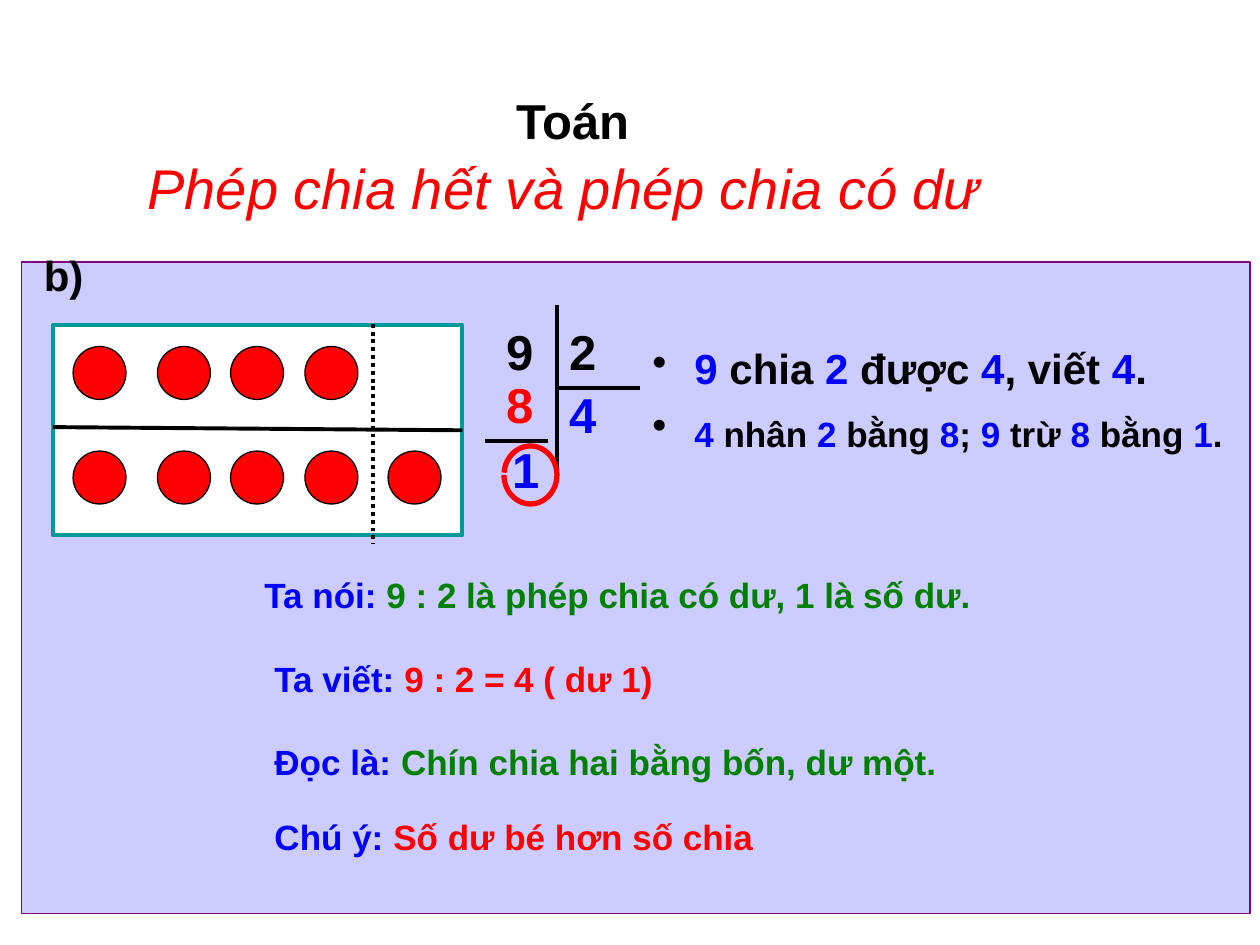
import math

import pptx
import pptx.dml.color
import pptx.enum.dml
import pptx.enum.shapes
import pptx.enum.text
import pptx.oxml
import pptx.oxml.ns
import pptx.util

Inches = pptx.util.Inches
Pt = pptx.util.Pt
SHAPES = pptx.enum.shapes.MSO_SHAPE
BLACK, RED, BLUE, GREEN = "000000", "FF0000", "0000FF", "008000"


def color(value):
    return pptx.dml.color.RGBColor.from_string(value)


def set_line(line, value, width):
    line.color.rgb = color(value)
    line.width = Pt(width)


def add_figure(slide, kind, left, top, width, height, fill, line, line_width=0.75):
    shape = slide.shapes.add_shape(
        kind, Inches(left), Inches(top), Inches(width), Inches(height))
    shape.shadow.inherit = False
    shape.fill.solid()
    shape.fill.fore_color.rgb = color(fill)
    set_line(shape.line, line, line_width)
    return shape


def add_line(slide, x1, y1, x2, y2, dash=None):
    connector = slide.shapes.add_connector(
        pptx.enum.shapes.MSO_CONNECTOR.STRAIGHT,
        Inches(x1), Inches(y1), Inches(x2), Inches(y2))
    set_line(connector.line, BLACK, 2.25)
    if dash:
        connector.line.dash_style = dash
    properties = connector._element.spPr
    properties.append(pptx.oxml.parse_xml(
        "<a:effectLst %s/>" % pptx.oxml.ns.nsdecls("a")))
    return connector


def add_bullet(paragraph):
    properties = paragraph._p.get_or_add_pPr()
    indent = Inches(0.24)
    properties.set("marL", str(indent))
    properties.set("indent", str(-indent))
    properties.append(pptx.oxml.parse_xml(
        '<a:buChar %s char="•"/>' % pptx.oxml.ns.nsdecls("a")))


def add_text(slide, runs, left, top, width, height, size=20, bold=True,
             italic=False, centered=False, bullet=False, lead_size=None):
    """Runs are (text, color) pairs; lead_size applies to the first run."""
    box = slide.shapes.add_textbox(
        Inches(left), Inches(top), Inches(width), Inches(height))
    frame = box.text_frame
    frame.word_wrap = True
    frame.auto_size = pptx.enum.text.MSO_AUTO_SIZE.SHAPE_TO_FIT_TEXT
    paragraph = frame.paragraphs[0]
    paragraph.space_before = Pt((lead_size or size) / 10)
    if centered:
        paragraph.alignment = pptx.enum.text.PP_ALIGN.CENTER
    if bullet:
        add_bullet(paragraph)
    for index, (text, value) in enumerate(runs):
        run = paragraph.add_run()
        run.text = text
        font = run.font
        font.name = "Arial"
        font.size = Pt(lead_size if lead_size and index == 0 else size)
        font.bold = bold
        font.italic = italic
        font.color.rgb = color(value)


def add_ring(slide, center_x, center_y, radius_x, radius_y, steps=72):
    points = []
    for step in range(steps):
        angle = math.pi + 0.08 + 2 * math.pi * step / steps
        points.append((Inches(center_x + radius_x * math.cos(angle)),
                       Inches(center_y + radius_y * math.sin(angle))))
    points.append((Inches(center_x - radius_x), Inches(center_y)))
    builder = slide.shapes.build_freeform(*points[0])
    builder.add_line_segments(points[1:], close=False)
    ring = builder.convert_to_shape()
    ring.shadow.inherit = False
    ring.fill.background()
    set_line(ring.line, RED, 3)


def add_counters(slide):
    box = add_figure(slide, SHAPES.RECTANGLE, 0.42, 2.58, 3.25, 1.67,
                     "FFFFFF", "009999", 2.25)
    columns = [0.58, 1.25, 1.83, 2.42, 3.08]
    for top, count in ((2.75, 4), (3.58, 5)):
        for left in columns[:count]:
            add_figure(slide, SHAPES.OVAL, left, top, 0.42, 0.42, RED, BLACK)
    divider = add_line(slide, 0.42, 3.39, 3.67, 3.42)
    divider.end_connect(box, 3)
    add_line(slide, 2.96, 2.57, 2.96, 4.32,
             pptx.enum.dml.MSO_LINE.ROUND_DOT)


def add_division(slide):
    for ends in ((4.42, 2.42, 4.42, 3.75), (4.42, 3.08, 5.08, 3.08),
                 (3.85, 3.5, 4.35, 3.5)):
        add_line(slide, *ends)
    for digit, value, left, top in (
            ("9", BLACK, 3.92, 2.5), ("2", BLACK, 4.42, 2.5),
            ("4", BLUE, 4.42, 3), ("8", RED, 3.92, 2.92), ("1", BLUE, 3.97, 3.44)):
        add_text(slide, [(digit, value)], left, top, 0.5, 0.57, size=28)
    add_ring(slide, 4.21, 3.77, 0.21, 0.23)


def add_steps(slide):
    first = [(" ", BLACK), ("9", BLUE), (" chia ", BLACK), ("2", BLUE),
             (" được ", BLACK), ("4", BLUE), (", viết ", BLACK),
             ("4", BLUE), (".", BLACK)]
    second = [(" ", BLACK), ("4", BLUE), (" nhân ", BLACK), ("2", BLUE),
              (" bằng ", BLACK), ("8", BLUE), ("; ", BLACK), ("9 ", BLUE),
              ("trừ ", BLACK), ("8", BLUE), (" bằng ", BLACK),
              ("1", BLUE), (".", BLACK)]
    add_text(slide, first, 5.08, 2.67, 4.25, 0.51, size=24, bullet=True)
    add_text(slide, second, 5.08, 3.17, 5.17, 0.51, bullet=True, lead_size=24)


def add_conclusions(slide):
    for label, statement, value, left, top, width, height in (
            ("Ta nói:", " 9 : 2 là phép chia có dư, 1 là số dư.", GREEN,
             2, 4.5, 7.42, 0.94),
            ("Ta viết: ", "9 : 2 = 4 ( dư 1)", RED, 2.08, 5.17, 5.17, 0.44),
            ("Đọc là:", " Chín chia hai bằng bốn, dư một.", GREEN,
             2.08, 5.83, 6, 0.44),
            ("Chú ý: ", "Số dư bé hơn số chia", RED, 2.08, 6.42, 4.25, 0.44)):
        add_text(slide, [(label, BLUE), (statement, value)],
                 left, top, width, height)


def main():
    presentation = pptx.Presentation()
    presentation.slide_width = Inches(10)
    presentation.slide_height = Inches(7.5)
    slide = presentation.slides.add_slide(presentation.slide_layouts[6])

    # Headings
    add_text(slide, [("Toán", BLACK)], 4, 0.67, 1.58, 0.57, size=28)
    add_text(slide, [("Phép chia hết và phép chia có dư ", RED)],
             0.94, 1.17, 7.2, 0.83, size=32, bold=False, italic=True,
             centered=True)

    # Panel with the worked example
    add_figure(slide, SHAPES.RECTANGLE, 0.17, 2.08, 9.75, 5.17,
               "CCCCFF", "800080")
    add_text(slide, [("b)", BLACK)], 0.25, 1.93, 0.67, 0.51, size=24)
    add_counters(slide)
    add_division(slide)
    add_steps(slide)
    add_conclusions(slide)

    presentation.save("out.pptx")


if __name__ == "__main__":
    main()
